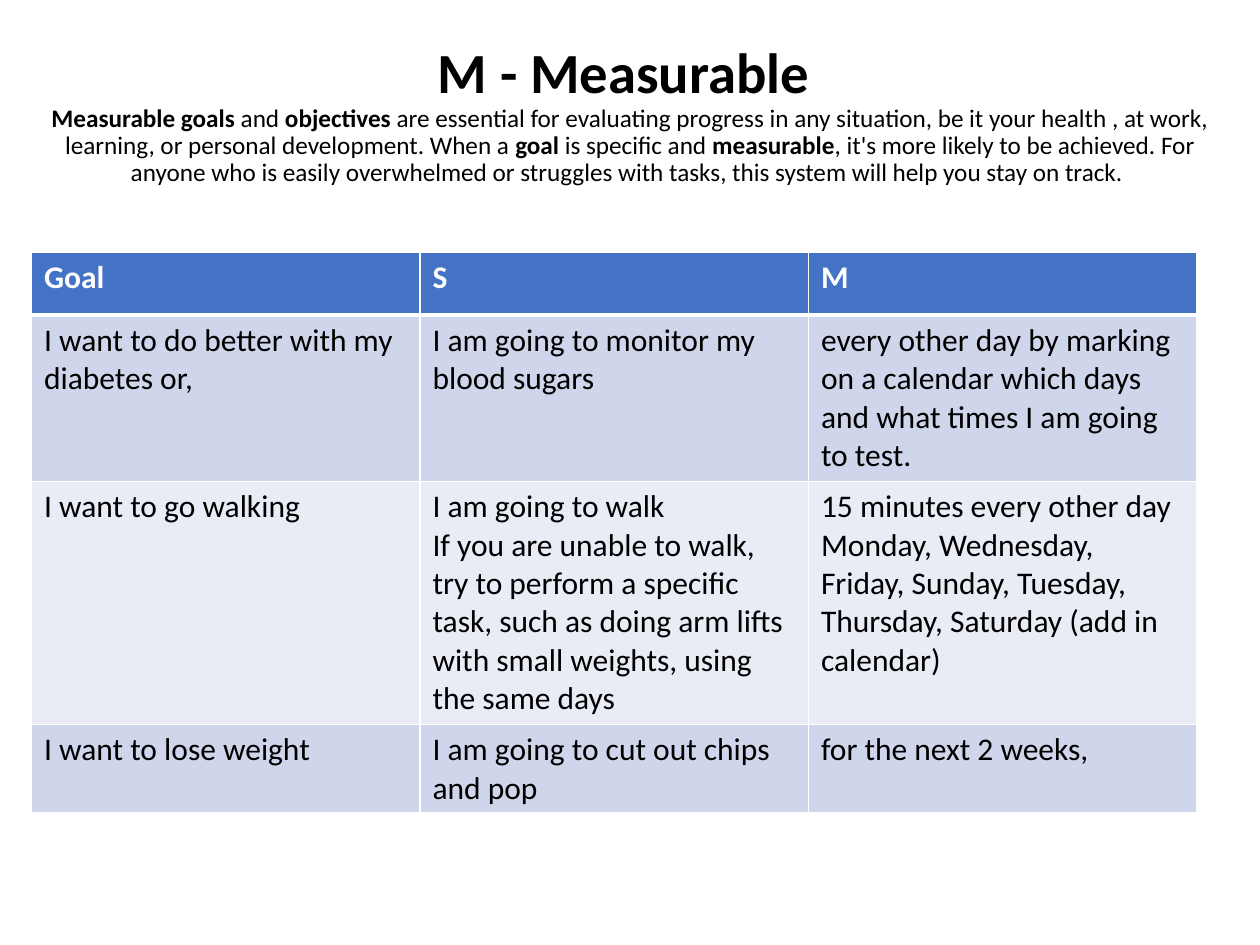
from dataclasses import dataclass
from lxml.etree import SubElement
from pptx import Presentation
from pptx.dml.color import RGBColor as Rgb
from pptx.enum.text import MSO_ANCHOR as Anchor, PP_ALIGN as Align
from pptx.oxml.ns import qn
from pptx.util import Inches, Pt


@dataclass(frozen=True)
class Theme:
    font: str = "Calibri"
    ink: str = "000000"
    paper: str = "FFFFFF"
    head: str = "4472C4"
    bands: tuple[str, str] = ("CFD5EA", "E9EBF5")
    title: float = 32.4
    intro: float = 14.4
    body: float = 18
    thin: float = 1
    thick: float = 3


@dataclass(frozen=True)
class Box:
    left: float
    top: float
    width: float
    height: float

    def place(self) -> list[int]:
        return [unit(n) for n in (self.left, self.top, self.width, self.height)]


@dataclass(frozen=True)
class Span:
    text: str
    bold: bool = False


@dataclass(frozen=True)
class Row:
    height: float
    cells: tuple[str, str, str]


THEME = Theme()
WIDE, HIGH = Inches(10), Inches(7.5)
COLS = 40

TITLE = Box(1, 1.4, 38, 5.68)
TABLE = Box(1, 8, 37, 17.8)

HEADING = "M - Measurable "
INTRO = (
    Span("Measurable goals", True),
    Span(" and "),
    Span("objectives", True),
    Span(" are essential for evaluating progress in any situation, be it your "
         "health , at work, learning, or personal development. When a "),
    Span("goal", True),
    Span(" is specific and "),
    Span("measurable", True),
    Span(", it's more likely to be achieved. For anyone who is easily overwhelmed "
         "or struggles with tasks, this system will help you stay on track. "),
)
ROWS = (
    Row(2, ("Goal", "S", "M")),
    Row(5.28, (
        "I want to do better with my diabetes or,",
        "I am going to monitor my blood sugars",
        "every other day by marking on a calendar which days and what times "
        "I am going to test.",
    )),
    Row(7.72, (
        "I want to go walking",
        "I am going to walk\nIf you are unable to walk, try to perform a specific task, "
        "such as doing arm lifts with small weights, using the same days",
        "15 minutes every other day Monday, Wednesday, Friday, Sunday, Tuesday, "
        "Thursday, Saturday (add in calendar)",
    )),
    Row(2.8, (
        "I want to lose weight",
        "I am going to cut out chips and pop",
        "for the next 2 weeks,",
    )),
)


def unit(count: float) -> int:
    return round(WIDE * count / COLS)


def style(run, size: float, color: str, bold: bool) -> None:
    font = run.font
    font.name, font.size, font.bold = THEME.font, Pt(size), bold
    font.color.rgb = Rgb.from_string(color)


def draw_title(slide) -> None:
    frame = slide.shapes.add_textbox(*TITLE.place()).text_frame
    frame.word_wrap = True
    frame.vertical_anchor = Anchor.TOP
    frame.margin_top = 0
    para = frame.paragraphs[0]
    para.alignment, para.line_spacing = Align.CENTER, 0.9
    para.text = HEADING
    style(para.runs[0], THEME.title, THEME.ink, True)
    para.add_line_break()
    for span in INTRO:
        run = para.add_run()
        run.text = span.text
        style(run, THEME.intro, THEME.ink, span.bold)


def edge(cell, side: str, width: float) -> None:
    props = cell._tc.get_or_add_tcPr()
    line = SubElement(props, qn(f"a:ln{side}"), w=str(Pt(width)))
    fill = SubElement(line, qn("a:solidFill"))
    SubElement(fill, qn("a:srgbClr"), val=THEME.paper)


def draw_cell(cell, text: str, level: int) -> None:
    first = level == 0
    for side in "LRTB":
        heavy = (first and side == "B") or (level == 1 and side == "T")
        edge(cell, side, THEME.thick if heavy else THEME.thin)
    cell.fill.solid()
    shade = THEME.head if first else THEME.bands[(level - 1) % 2]
    cell.fill.fore_color.rgb = Rgb.from_string(shade)
    cell.text_frame.text = text
    for para in cell.text_frame.paragraphs:
        for run in para.runs:
            style(run, THEME.body, THEME.paper if first else THEME.ink, first)


def draw_table(slide) -> None:
    count = len(ROWS[0].cells)
    table = slide.shapes.add_table(len(ROWS), count, *TABLE.place()).table
    for col in table.columns:
        col.width = unit(TABLE.width / count)
    for level, row in enumerate(ROWS):
        table.rows[level].height = unit(row.height)
        for spot, text in enumerate(row.cells):
            draw_cell(table.cell(level, spot), text, level)


def main() -> None:
    deck = Presentation()
    deck.slide_width, deck.slide_height = WIDE, HIGH
    slide = deck.slides.add_slide(deck.slide_layouts[6])
    draw_title(slide)
    draw_table(slide)
    deck.save("out.pptx")


if __name__ == "__main__":
    main()
